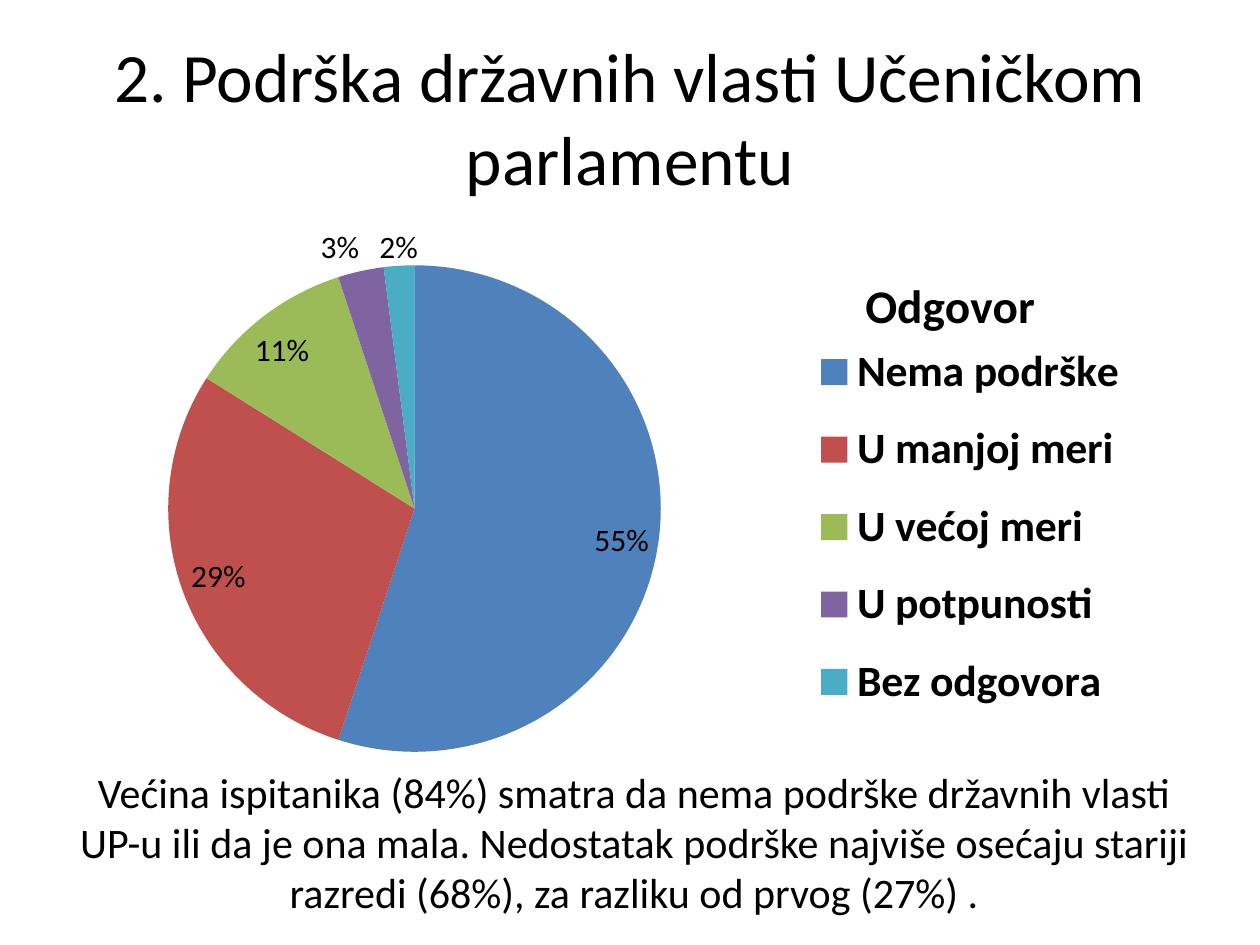
from lxml.etree import SubElement
from pptx import Presentation
from pptx.chart.data import CategoryChartData
from pptx.dml.color import RGBColor
from pptx.enum.chart import XL_CHART_TYPE, XL_LABEL_POSITION, XL_LEGEND_POSITION
from pptx.enum.text import MSO_ANCHOR, PP_ALIGN
from pptx.oxml.ns import qn
from pptx.util import Cm, Pt

COLORS = {
    "text": "000000",
    "Nema podrške": "4F81BD",
    "U manjoj meri": "C0504D",
    "U većoj meri": "9BBB59",
    "U potpunosti": "8064A2",
    "Bez odgovora": "4BACC6",
}
ANSWERS = {"Nema podrške": 55, "U manjoj meri": 29, "U većoj meri": 11,
           "U potpunosti": 3, "Bez odgovora": 2}


def format_font(font, size, bold=False):
    font.name = "Calibri"
    font.size = Pt(size)
    font.bold = bold
    font.color.rgb = RGBColor.from_string(COLORS["text"])


def place_chart_part(element, index, **fractions):
    """Position a chart part by fractions of the chart area."""
    for old_layout in element.findall(qn("c:layout")):
        element.remove(old_layout)
    layout = SubElement(element, qn("c:layout"))
    element.insert(index, layout)
    manual = SubElement(layout, qn("c:manualLayout"))
    for tag, value in fractions.items():
        SubElement(manual, qn(f"c:{tag}")).set("val", str(value))


presentation = Presentation()
presentation.slide_width = Cm(25.4)
presentation.slide_height = Cm(19.05)
slide = presentation.slides.add_slide(presentation.slide_layouts[5])

# Title
title = slide.shapes.title
title.left, title.top, title.width, title.height = Cm(1.27), Cm(0.76), Cm(22.86), Cm(3.18)
title.text_frame.text = "2. Podrška državnih vlasti Učeničkom parlamentu"
title.text_frame.vertical_anchor = MSO_ANCHOR.MIDDLE
paragraph = title.text_frame.paragraphs[0]
paragraph.alignment = PP_ALIGN.CENTER
format_font(paragraph.font, 39.6)

# Pie chart of answers
chart_data = CategoryChartData()
chart_data.categories = list(ANSWERS)
chart_data.add_series("Odgovor", list(ANSWERS.values()))
chart = slide.shapes.add_chart(XL_CHART_TYPE.PIE, Cm(1.27), Cm(4.45),
                               Cm(22.86), Cm(12.57), chart_data).chart
format_font(chart.font, 18)
plot = chart.plots[0]
plot.vary_by_categories = True
for index, answer in enumerate(ANSWERS):
    fill = plot.series[0].points[index].format.fill
    fill.solid()
    fill.fore_color.rgb = RGBColor.from_string(COLORS[answer])

# Percentage labels
plot.has_data_labels = True
labels = plot.data_labels
labels.show_percentage = True
labels.show_value = False
labels.number_format = "0%"
labels.number_format_is_linked = False
labels.position = XL_LABEL_POSITION.BEST_FIT
format_font(labels.font, 18)

# Chart title and legend to the right of the pie
chart.has_title = True
chart.chart_title.text_frame.text = "Odgovor"
format_font(chart.chart_title.text_frame.paragraphs[0].font, 27, bold=True)
chart.has_legend = True
chart.legend.position = XL_LEGEND_POSITION.TOP
chart.legend.include_in_layout = False
format_font(chart.legend.font, 25, bold=True)

chart_element = chart.element.find(qn("c:chart"))
place_chart_part(chart_element.find(qn("c:title")), 1,
                 xMode="edge", yMode="edge", x=0.7, y=0.06)
place_chart_part(chart_element.find(qn("c:legend")), 1,
                 xMode="edge", yMode="edge", x=0.63, y=0.15, w=0.34, h=0.67)
place_chart_part(chart_element.find(qn("c:plotArea")), 0, layoutTarget="inner",
                 xMode="edge", yMode="edge", x=0.09, y=0.06, w=0.44, h=0.79)

# Conclusion below the chart
conclusion = slide.shapes.add_textbox(Cm(1.09), Cm(15.32), Cm(23.39), Cm(3.33))
conclusion.text_frame.word_wrap = True
conclusion.text_frame.text = (
    "Većina ispitanika (84%) smatra da nema podrške državnih vlasti UP-u ili da je ona mala. "
    "Nedostatak podrške najviše osećaju stariji razredi (68%), za razliku od prvog (27%) ."
)
paragraph = conclusion.text_frame.paragraphs[0]
paragraph.alignment = PP_ALIGN.CENTER
format_font(paragraph.font, 24)

presentation.save("out.pptx")
